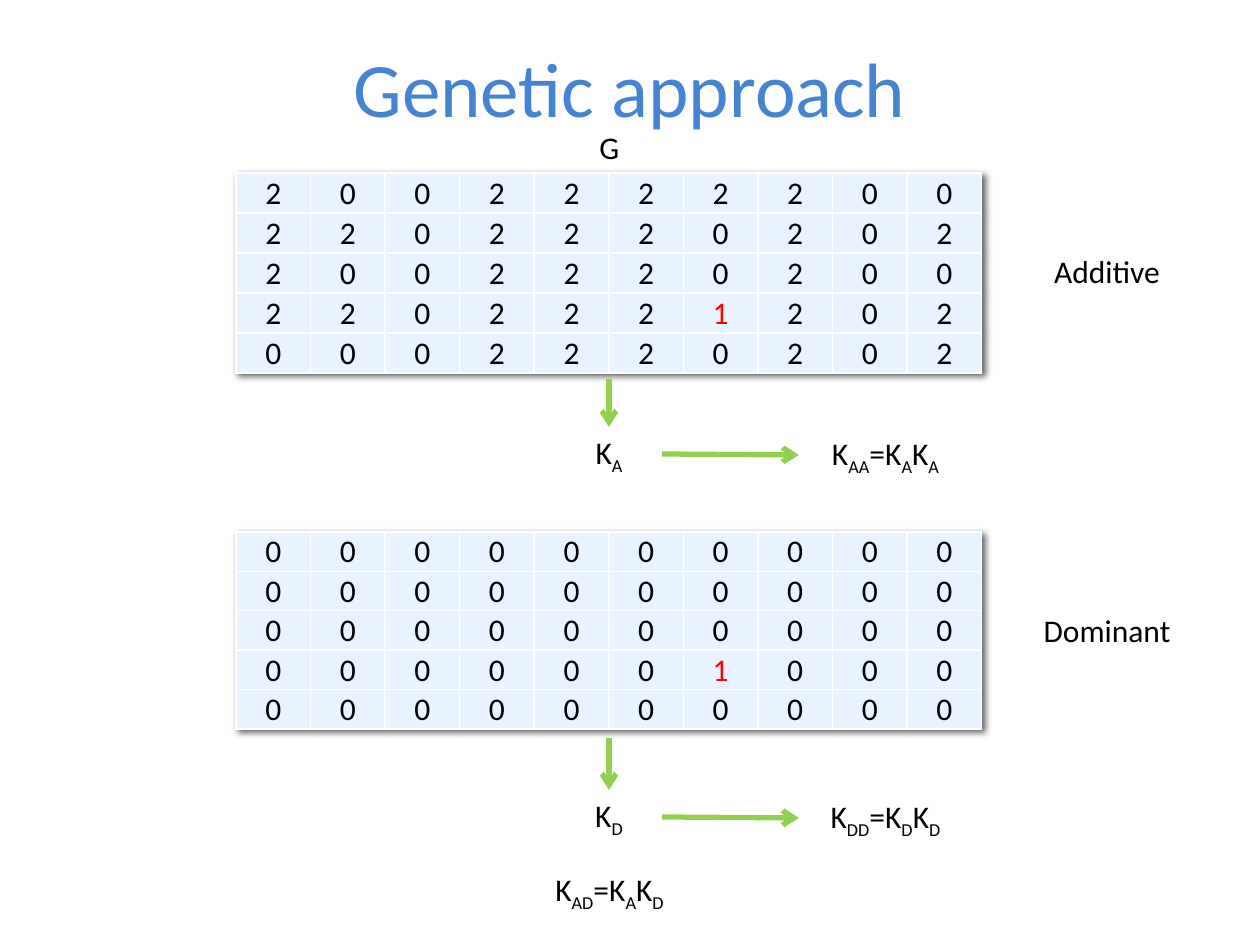
"""Build the slide on additive and dominant kinship matrices."""
import dataclasses

import lxml.etree
import pptx
import pptx.dml.color
import pptx.enum.shapes
import pptx.enum.text
import pptx.oxml
import pptx.oxml.ns
import pptx.util

EMU_PER_PX = 914400 / 126
CENTER = pptx.enum.text.PP_ALIGN.CENTER
MIDDLE = pptx.enum.text.MSO_ANCHOR.MIDDLE
TOP_SIDE = 0

ADDITIVE = ["2002222200", "2202220202", "2002220200", "2202221202", "0002220202"]
DOMINANT = ["0000000000", "0000000000", "0000000000", "0000001000", "0000000000"]


@dataclasses.dataclass(frozen=True)
class Theme:
    font: str = "Calibri"
    title_size: int = 44
    body_size: int = 18
    title: str = "4584D3"
    text: str = "000000"
    heterozygote: str = "FF0000"
    cell: str = "E8F3FF"
    border: str = "FFFFFF"
    arrow: str = "92D050"
    border_width: int = 1
    arrow_width: int = 3


THEME = Theme()


def px(length):
    return pptx.util.Emu(round(length * EMU_PER_PX))


def rgb(color):
    return pptx.dml.color.RGBColor.from_string(color)


def add_run(paragraph, text, color=THEME.text, size=THEME.body_size):
    run = paragraph.add_run()
    run.text = text
    run.font.name = THEME.font
    run.font.size = pptx.util.Pt(size)
    run.font.color.rgb = rgb(color)
    return run


def add_title(slide, text, box):
    title = slide.shapes.title
    title.left, title.top, title.width, title.height = map(px, box)
    title.text_frame.vertical_anchor = MIDDLE
    paragraph = title.text_frame.paragraphs[0]
    paragraph.alignment = CENTER
    add_run(paragraph, text, THEME.title, THEME.title_size)


def add_label(slide, box, *parts, wrap=True):
    label = slide.shapes.add_textbox(*map(px, box))
    label.text_frame.word_wrap = wrap
    paragraph = label.text_frame.paragraphs[0]
    if wrap:
        paragraph.alignment = CENTER
    for index, part in enumerate(parts):
        run = add_run(paragraph, part)
        if index % 2:
            run.font._element.set("baseline", "-25000")
    return label


def add_borders(cell):
    properties = cell._tc.get_or_add_tcPr()
    for position, side in enumerate(("lnL", "lnR", "lnT", "lnB")):
        border = pptx.oxml.parse_xml(
            f'<a:{side} {pptx.oxml.ns.nsdecls("a")} w="{pptx.util.Pt(THEME.border_width)}">'
            f'<a:solidFill><a:srgbClr val="{THEME.border}"/></a:solidFill></a:{side}>'
        )
        properties.insert(position, border)


def format_cell(cell, value):
    cell.margin_left = cell.margin_right = cell.margin_top = px(1)
    cell.margin_bottom = 0
    cell.vertical_anchor = MIDDLE
    cell.fill.solid()
    cell.fill.fore_color.rgb = rgb(THEME.cell)
    add_borders(cell)
    paragraph = cell.text_frame.paragraphs[0]
    paragraph.alignment = CENTER
    add_run(paragraph, value, THEME.heterozygote if value == "1" else THEME.text)


def add_table_shadow(table):
    shadow = pptx.oxml.parse_xml(
        f'<a:effectLst {pptx.oxml.ns.nsdecls("a")}>'
        f'<a:outerShdw blurRad="{px(7)}" dist="{px(3)}" dir="2700000" algn="tl">'
        '<a:srgbClr val="000000"><a:alpha val="60000"/></a:srgbClr>'
        '</a:outerShdw></a:effectLst>'
    )
    table._tbl.tblPr.insert(0, shadow)


def add_matrix(slide, genotypes, box):
    frame = slide.shapes.add_table(len(genotypes), len(genotypes[0]), *map(px, box))
    table = frame.table
    table.first_row = table.horz_banding = False
    add_table_shadow(table)
    for row, values in zip(table.rows, genotypes):
        for cell, value in zip(row.cells, values):
            format_cell(cell, value)


def add_arrow(slide, start, end, target=None):
    arrow = slide.shapes.add_connector(
        pptx.enum.shapes.MSO_CONNECTOR.STRAIGHT, *map(px, (*start, *end))
    )
    arrow.line.color.rgb = rgb(THEME.arrow)
    arrow.line.width = pptx.util.Pt(THEME.arrow_width)
    tail = pptx.oxml.ns.qn("a:tailEnd")
    lxml.etree.SubElement(arrow.line._get_or_add_ln(), tail, type="arrow")
    lxml.etree.SubElement(arrow._element.spPr, pptx.oxml.ns.qn("a:effectLst"))
    if target is not None:
        arrow.end_connect(target, TOP_SIDE)


def add_model(slide, name, letter, genotypes, top, height, kinship_top):
    add_matrix(slide, genotypes, (236, top, 746, height))
    add_label(slide, (1017, top + 73, 180, 50), name)
    kinship = add_label(slide, (519, kinship_top, 180, 50), "K", letter)
    add_arrow(slide, (609, top + 206), (609, kinship_top), kinship)
    add_label(slide, (789, kinship_top + 1, 193, 77),
              "K", letter * 2, "=K", letter, "K", letter)
    add_arrow(slide, (662, kinship_top + 27), (799, kinship_top + 28))


def main():
    presentation = pptx.Presentation()
    presentation.slide_width, presentation.slide_height = px(1260), px(945)
    slide = presentation.slides.add_slide(presentation.slide_layouts[5])
    add_title(slide, "Genetic approach", (63, 0, 1134, 173))
    add_label(slide, (587, 122, 45, 50), "G", wrap=False)
    add_model(slide, "Additive", "A", ADDITIVE, 173, 200, 427)
    add_model(slide, "Dominant", "D", DOMINANT, 532, 197, 790)
    add_label(slide, (513, 864, 193, 77), "K", "AD", "=K", "A", "K", "D")
    presentation.save("out.pptx")


if __name__ == "__main__":
    main()
